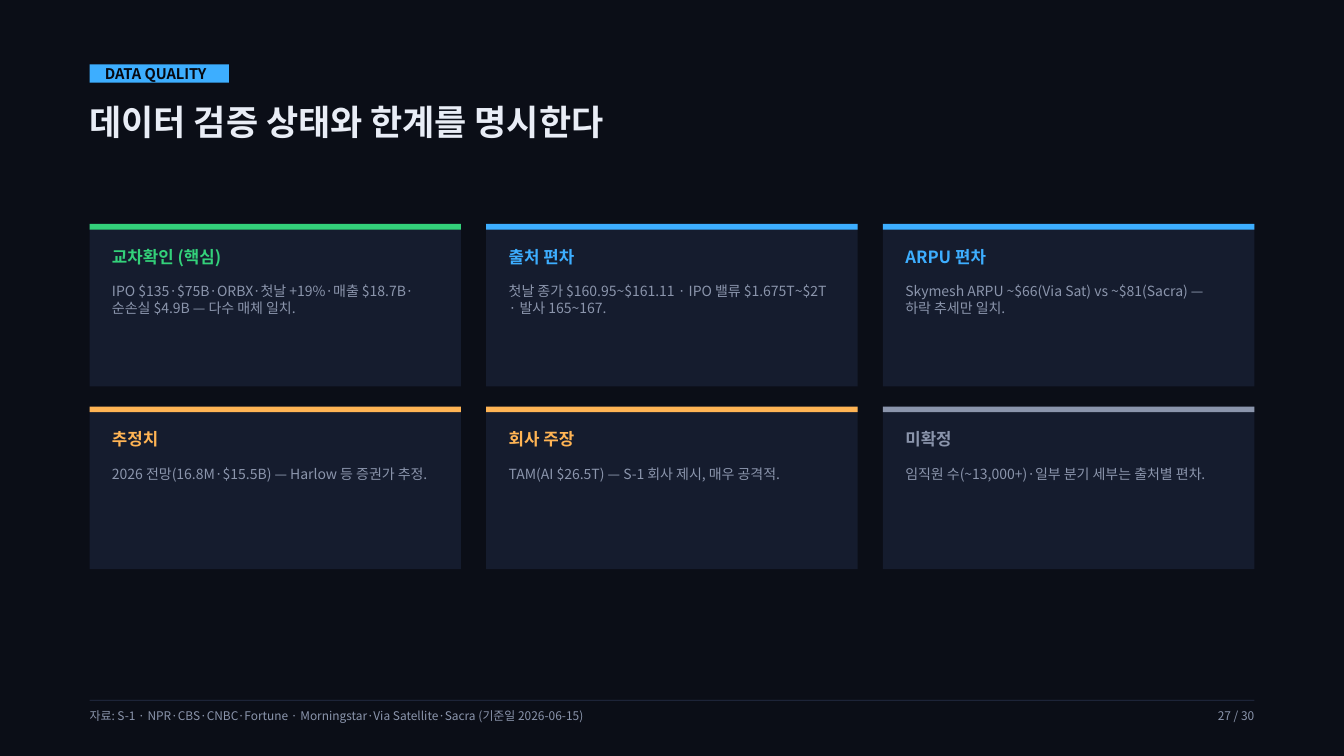
from lxml import etree
from pptx import Presentation
from pptx import util as u
from pptx.dml.color import RGBColor
from pptx.enum import shapes, text
from pptx.oxml.ns import qn

PX = 6350
FONT = "Noto Sans CJK KR"
BACK = RGBColor(0x0B, 0x0E, 0x17)
INK = RGBColor(0x06, 0x08, 0x0F)
WHITE = RGBColor(0xE9, 0xED, 0xF6)
PANEL = RGBColor(0x15, 0x1C, 0x2E)
RULE = RGBColor(0x27, 0x30, 0x4A)
GREY = RGBColor(0x8B, 0x95, 0xAC)
BLUE = RGBColor(0x3D, 0xAE, 0xFF)
GREEN = RGBColor(0x33, 0xD1, 0x7A)
AMBER = RGBColor(0xFF, 0xB4, 0x54)

TAG = "DATA QUALITY"
TITLE = "데이터 검증 상태와 한계를 명시한다"
CARDS = [
    ("교차확인 (핵심)", GREEN,
     "IPO $135·$75B·ORBX·첫날 +19%·매출 $18.7B·순손실 $4.9B — 다수 매체 일치."),
    ("출처 편차", BLUE,
     "첫날 종가 $160.95~$161.11 · IPO 밸류 $1.675T~$2T · 발사 165~167."),
    ("ARPU 편차", BLUE,
     "Skymesh ARPU ~$66(Via Sat) vs ~$81(Sacra) — 하락 추세만 일치."),
    ("추정치", AMBER, "2026 전망(16.8M·$15.5B) — Harlow 등 증권가 추정."),
    ("회사 주장", AMBER, "TAM(AI $26.5T) — S-1 회사 제시, 매우 공격적."),
    ("미확정", GREY, "임직원 수(~13,000+)·일부 분기 세부는 출처별 편차."),
]
SOURCE = ("자료: S-1 · NPR·CBS·CNBC·Fortune · Morningstar·Via Satellite·Sacra "
          "(기준일 2026-06-15)")
PAGE = "27 / 30"

LEFT, WIDTH = 128, 1664
COLS, GAP_X, GAP_Y = 3, 36, 30
CARD_TOP, CARD_H, BAR_H, INSET = 320, 232, 8, 32
CARD_W = (WIDTH - (COLS - 1) * GAP_X) / COLS


def emu(*lengths):
    return [round(n * PX) for n in lengths]


def write(sp, words, size, color, bold=False, align=text.PP_ALIGN.LEFT,
          inset=0, wrap=True, anchor=text.MSO_ANCHOR.TOP):
    tf = sp.text_frame
    tf.text = words
    tf.word_wrap = wrap
    tf.auto_size = text.MSO_AUTO_SIZE.NONE
    tf.vertical_anchor = anchor
    tf.margin_left = tf.margin_right = inset * PX
    tf.margin_top = tf.margin_bottom = 0
    p = tf.paragraphs[0]
    p.alignment = align
    p.line_spacing = 1.0
    p.space_before = u.Pt(0)
    r = p.runs[0]
    r.font.name = FONT
    r.font.size = u.Pt(size)
    r.font.bold = bold
    r.font.color.rgb = color
    ea = etree.SubElement(r.font._element, qn("a:ea"))
    ea.set("typeface", FONT)


def add_rect(s, x, y, w, h, color):
    sp = s.shapes.add_shape(shapes.MSO_SHAPE.RECTANGLE, *emu(x, y, w, h))
    sp.shadow.inherit = False
    sp.fill.solid()
    sp.fill.fore_color.rgb = color
    sp.line.fill.background()
    return sp


def add_label(s, x, y, w, h, *args, **style):
    write(s.shapes.add_textbox(*emu(x, y, w, h)), *args, **style)


def add_card(s, index, heading, color, body):
    row, col = divmod(index, COLS)
    x = LEFT + col * (CARD_W + GAP_X)
    y = CARD_TOP + row * (CARD_H + GAP_Y - 1)
    inner = CARD_W - 2 * INSET
    add_rect(s, x, y, CARD_W, CARD_H, PANEL)
    add_rect(s, x, y, CARD_W, BAR_H, color)
    add_label(s, x + INSET, y + 32, inner, 29, heading, 12, color, bold=True)
    add_label(s, x + INSET, y + 84, inner, 49, body, 10, GREY)


def main():
    prs = Presentation()
    prs.slide_width, prs.slide_height = emu(1920, 1080)
    s = prs.slides.add_slide(prs.slide_layouts[5])
    s.background.fill.solid()
    s.background.fill.fore_color.rgb = BACK

    title = s.shapes.title
    title.left, title.top, title.width, title.height = emu(LEFT, 144, WIDTH, 60)
    write(title, TITLE, 25, WHITE, bold=True)

    tag = add_rect(s, LEFT, 92, 199, 26, BLUE)
    write(tag, TAG, 10.5, INK, bold=True, inset=22, wrap=False,
          anchor=text.MSO_ANCHOR.MIDDLE)

    for index, card in enumerate(CARDS):
        add_card(s, index, *card)

    add_rect(s, LEFT, 1000, WIDTH, 1, RULE)
    add_label(s, LEFT, 1012, 1524, 20, SOURCE, 8.5, GREY)
    add_label(s, LEFT + 1524, 1012, 140, 20, PAGE, 8.5, GREY,
              align=text.PP_ALIGN.RIGHT)
    prs.save("out.pptx")


if __name__ == "__main__":
    main()
